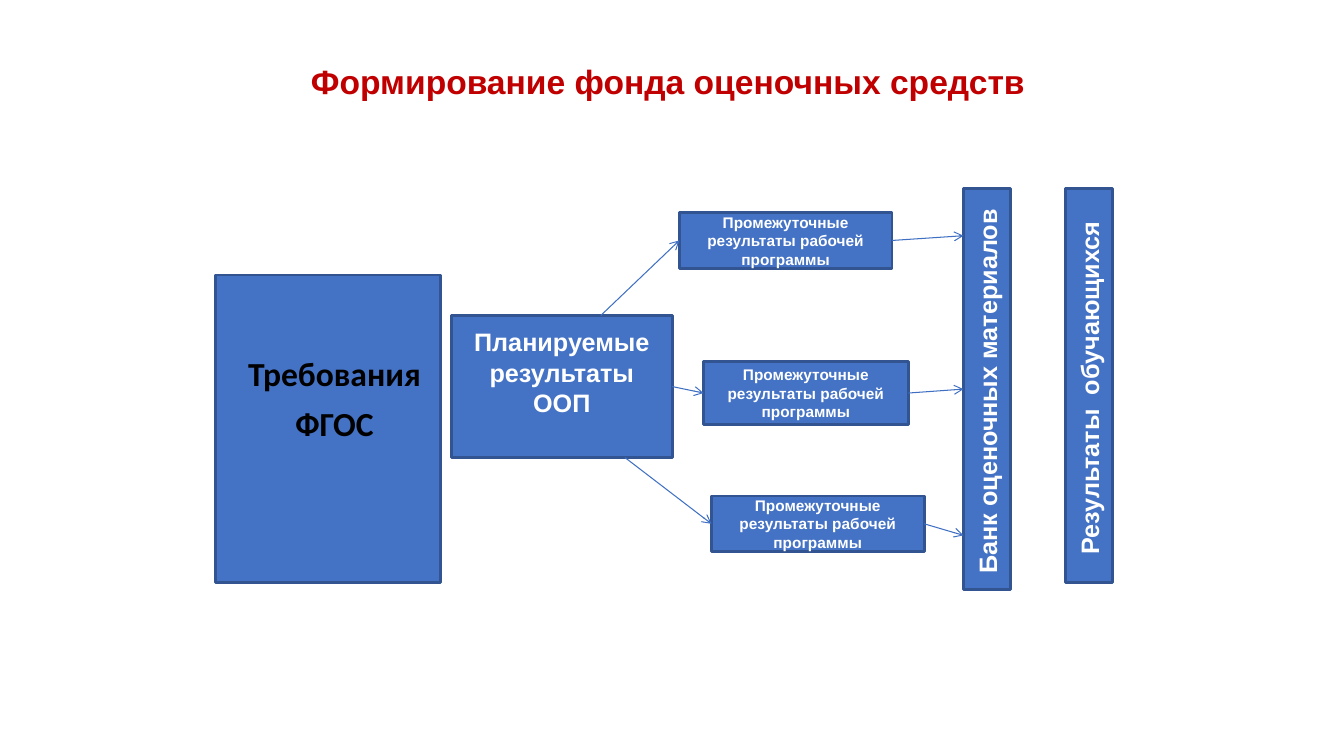
from dataclasses import dataclass

from lxml import etree
from pptx import Presentation
from pptx.dml.color import RGBColor
from pptx.enum.shapes import MSO_CONNECTOR, MSO_SHAPE
from pptx.enum.text import MSO_ANCHOR, MSO_AUTO_SIZE, PP_ALIGN
from pptx.oxml.ns import qn
from pptx.util import Cm, Pt

RECT = MSO_SHAPE.RECTANGLE
STRAIGHT = MSO_CONNECTOR.STRAIGHT
CENTER = PP_ALIGN.CENTER
MIDDLE = MSO_ANCHOR.MIDDLE
NO_AUTOFIT = MSO_AUTO_SIZE.NONE
LEFT_SIDE, RIGHT_SIDE = 1, 3

BLUE, DARK_BLUE, ARROW_BLUE = "4472C4", "325491", "3F6FC3"
WHITE, BLACK, RED = "FFFFFF", "000000", "C00000"


@dataclass
class Box:
    text: str
    left: float
    top: float
    width: float
    height: float
    size: float = 18
    bottom_inset: float = 0.13
    vertical: bool = False


@dataclass
class Program:
    box: Box
    arrow_start: tuple[float, float] | None
    arrow_end: tuple[float, float] | None


PLANNED = Box("Планируемые результаты ООП", 11.38, 7.95, 5.56, 3.58, bottom_inset=0.86)
BANK = Box("Банк оценочных материалов", 24.28, 4.75, 1.19, 10.11, vertical=True)
RESULTS = Box("Результаты  обучающихся", 26.85, 4.75, 1.19, 9.93, vertical=True)
INTERIM = "Промежуточные результаты рабочей программы"
PROGRAMS = [
    Program(Box(INTERIM, 17.12, 5.36, 5.36, 1.4, 11), (15.14, 7.95), (24.28, 5.94)),
    Program(Box(INTERIM, 17.73, 9.12, 5.16, 1.57, 11), None, None),
    Program(Box(INTERIM, 17.93, 12.5, 5.36, 1.4, 11), (15.75, 11.53), (24.28, 13.49)),
]


def rgb(color: str) -> RGBColor:
    return RGBColor.from_string(color)


def place(sp, left: float, top: float, width: float, height: float) -> None:
    sp.left, sp.top, sp.width, sp.height = Cm(left), Cm(top), Cm(width), Cm(height)


def paint(sp) -> None:
    sp.fill.solid()
    sp.fill.fore_color.rgb = rgb(BLUE)
    sp.line.color.rgb = rgb(DARK_BLUE)
    sp.line.width = Pt(2)


def format_paragraph(p, name: str, size: float, color: str) -> None:
    p.alignment = CENTER
    p.font.name = name
    p.font.size = Pt(size)
    p.font.bold = True
    p.font.color.rgb = rgb(color)


def add_box(s, box: Box):
    sp = s.shapes.add_shape(RECT, Cm(box.left), Cm(box.top), Cm(box.width), Cm(box.height))
    sp.shadow.inherit = False
    paint(sp)
    tf = sp.text_frame
    tf.word_wrap = True
    tf.vertical_anchor = MIDDLE
    tf.margin_bottom = Cm(box.bottom_inset)
    if box.vertical:
        tf._txBody.bodyPr.set("vert", "vert270")
    p = tf.paragraphs[0]
    p.text = box.text
    format_paragraph(p, "Arial", box.size, WHITE)
    return sp


def add_arrow(s, source, target, start: tuple[float, float] | None = None,
              end: tuple[float, float] | None = None) -> None:
    x1, y1 = start or (0, 0)
    x2, y2 = end or (0, 0)
    c = s.shapes.add_connector(STRAIGHT, Cm(x1), Cm(y1), Cm(x2), Cm(y2))
    if start is None:
        c.begin_connect(source, RIGHT_SIDE)
    if end is None:
        c.end_connect(target, LEFT_SIDE)
    c.line.color.rgb = rgb(ARROW_BLUE)
    c.line.width = Pt(0.75)
    etree.SubElement(c.line._get_or_add_ln(), qn("a:tailEnd"), type="arrow")
    etree.SubElement(c._element.spPr, qn("a:effectLst"))


def fill_title(sp) -> None:
    place(sp, -0.1, 1.4, 33.86, 1.27)
    tf = sp.text_frame
    tf.text = "Формирование фонда оценочных средств"
    tf.auto_size = NO_AUTOFIT
    format_paragraph(tf.paragraphs[0], "Arial", 24, RED)


def fill_requirements(sp) -> None:
    place(sp, 5.44, 6.93, 5.66, 7.75)
    paint(sp)
    tf = sp.text_frame
    tf.text = "Требования\nФГОС"
    tf.auto_size = NO_AUTOFIT
    tf.vertical_anchor = MIDDLE
    tf.margin_bottom = Cm(1.56)
    for p in tf.paragraphs:
        format_paragraph(p, "Calibri", 24, BLACK)
        p.line_spacing = 0.9
        p.space_before = Pt(10)
        pPr = p._p.get_or_add_pPr()
        pPr.set("marL", str(Cm(1.27)))
        pPr.set("indent", str(Cm(-0.95)))
        pPr.insert_element_before(etree.Element(qn("a:buNone")), "a:tabLst", "a:defRPr", "a:extLst")


def main() -> None:
    prs = Presentation()
    prs.slide_width, prs.slide_height = Cm(33.87), Cm(19.05)
    s = prs.slides.add_slide(prs.slide_layouts[1])
    fill_title(s.shapes.title)
    fill_requirements(s.placeholders[1])
    planned, bank, _ = [add_box(s, box) for box in (PLANNED, BANK, RESULTS)]
    for program in PROGRAMS:
        sp = add_box(s, program.box)
        add_arrow(s, planned, sp, start=program.arrow_start)
        add_arrow(s, sp, bank, end=program.arrow_end)
    prs.save("out.pptx")


if __name__ == "__main__":
    main()
